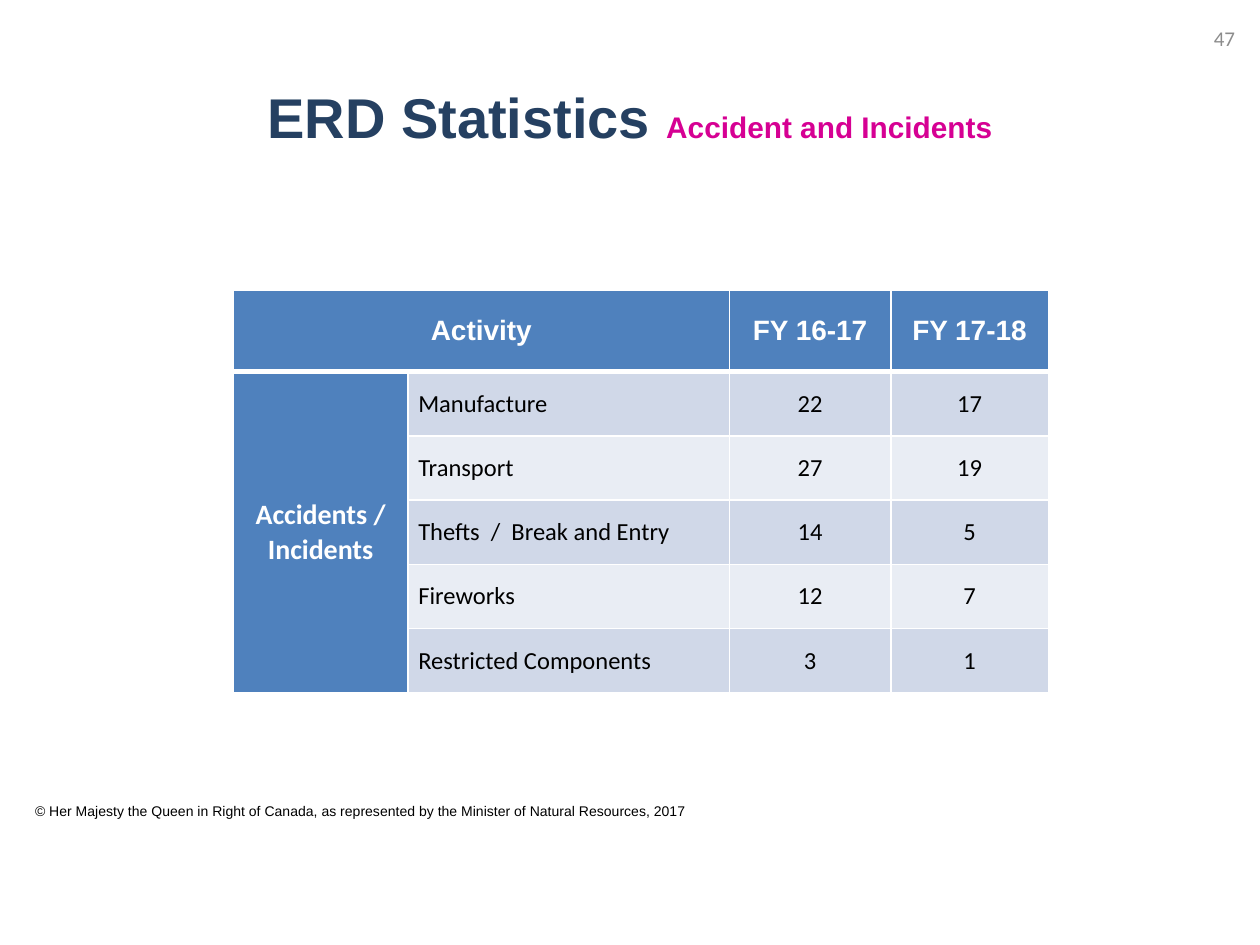
from dataclasses import dataclass

from lxml.etree import SubElement
from pptx import Presentation
from pptx.dml.color import RGBColor
from pptx.enum.text import MSO_ANCHOR as Anchor, PP_ALIGN as Align
from pptx.oxml.ns import qn
from pptx.util import Inches, Pt


@dataclass(frozen=True)
class Theme:
    """Colours, fonts and type sizes of the deck."""
    navy: str = "254061"
    magenta: str = "D60093"
    blue: str = "4F81BD"
    bands: tuple = ("D0D8E8", "E9EDF4")
    white: str = "FFFFFF"
    black: str = "000000"
    grey: str = "8C8C8C"
    head_font: str = "Arial"
    body_font: str = "Calibri"
    title: int = 32
    subtitle: int = 17
    header: int = 16
    body: int = 14
    number: int = 12
    note: int = 8


class Deck:
    """Holds the theme and current slide on a 100 by 75 grid."""

    def __init__(self, theme):
        """Open a 10 by 7.5 inch deck."""
        self.theme = theme
        self.prs = Presentation()
        self.prs.slide_width, self.prs.slide_height = Inches(10), Inches(7.5)
        self.unit = self.prs.slide_width / 100
        self.s = None

    def grid(self, *units):
        """Turn grid units into lengths."""
        return [round(u * self.unit) for u in units]

    def add_slide(self):
        """Start a title-only slide."""
        self.s = self.prs.slides.add_slide(self.prs.slide_layouts[5])

    def run(self, p, text, size, color, font, bold=False):
        """Add one formatted run."""
        r = p.add_run()
        r.text = text
        r.font.size, r.font.name, r.font.bold = Pt(size), font, bold
        r.font.color.rgb = RGBColor.from_string(color)

    def title(self, box, main_text, detail):
        """Place the title with its smaller coloured detail."""
        t, sp = self.theme, self.s.shapes.title
        sp.left, sp.top, sp.width, sp.height = self.grid(*box)
        tf = sp.text_frame
        tf.vertical_anchor = Anchor.MIDDLE
        p = tf.paragraphs[0]
        p.alignment = Align.CENTER
        self.run(p, main_text, t.title, t.navy, t.head_font, True)
        self.run(p, detail, t.subtitle, t.magenta, t.head_font, True)

    def label(self, box, text, size, color, font, align=Align.LEFT, anchor=Anchor.TOP):
        """Add a one-line text box."""
        tf = self.s.shapes.add_textbox(*self.grid(*box)).text_frame
        tf.word_wrap, tf.vertical_anchor = True, anchor
        p = tf.paragraphs[0]
        p.alignment = align
        self.run(p, text, size, color, font)

    def border(self, cell, **widths):
        """Draw white cell borders of the given widths in points."""
        tc_pr = cell._tc.get_or_add_tcPr()
        for side in "LRTB":
            ln = SubElement(tc_pr, qn(f"a:ln{side}"), w=str(Pt(widths.get(side, 1))))
            fill = SubElement(ln, qn("a:solidFill"))
            SubElement(fill, qn("a:srgbClr"), val=self.theme.white)

    def cell(self, cell, text, fill, align, style, inset, **widths):
        """Fill, border and letter one table cell."""
        self.border(cell, **widths)
        cell.fill.solid()
        cell.fill.fore_color.rgb = RGBColor.from_string(fill)
        cell.vertical_anchor = Anchor.MIDDLE
        cell.margin_left = cell.margin_right = Inches(inset)
        cell.margin_top = cell.margin_bottom = 0
        p = cell.text_frame.paragraphs[0]
        p.alignment = align
        if text:
            self.run(p, text, *style)

    def table(self, left, top, cols, head, row, header, group, rows):
        """Add a table with a merged header and a merged row group."""
        t = self.theme
        heights = [head] + [row] * len(rows)
        box = self.grid(left, top, sum(cols), sum(heights))
        tbl = self.s.shapes.add_table(len(heights), len(cols), *box).table
        tbl.horz_banding = False
        for column, width in zip(tbl.columns, self.grid(*cols)):
            column.width = width
        for line, height in zip(tbl.rows, self.grid(*heights)):
            line.height = height
        tbl.cell(0, 0).merge(tbl.cell(0, 1))
        tbl.cell(1, 0).merge(tbl.cell(len(rows), 0))

        head_style = (t.header, t.white, t.head_font, True)
        group_style = (t.header, t.white, t.body_font, True)
        body_style = (t.body, t.black, t.body_font)
        for c, text in enumerate(header):
            inset = 0.08 if c < 2 else 0.06
            self.cell(tbl.cell(0, c), text, t.blue, Align.CENTER, head_style, inset, B=3)
        for i, values in enumerate(rows):
            top_width = 1 if i else 3
            name = "" if i else group
            self.cell(tbl.cell(i + 1, 0), name, t.blue, Align.CENTER, group_style, 0.08, T=top_width)
            for c, text in enumerate(values, 1):
                align = Align.LEFT if c == 1 else Align.CENTER
                self.cell(tbl.cell(i + 1, c), text, t.bands[i % 2], align, body_style, 0.08, T=top_width)


def main():
    """Build the statistics slide."""
    t = Theme()
    deck = Deck(t)
    deck.add_slide()
    deck.label((1.8, 63.2, 54.4, 3.7),
               "© Her Majesty the Queen in Right of Canada, as represented by the Minister of Natural Resources, 2017",
               t.note, t.black, t.head_font)
    deck.title((0, 3, 100, 12.5), "ERD Statistics ", "Accident and Incidents")
    deck.table(18.5, 23, (13.9, 25.5, 12.8, 12.5), 6.5, 5.1,
               ("Activity", "", "FY 16-17", "FY 17-18"), "Accidents / Incidents",
               (("Manufacture", "22", "17"),
                ("Transport", "27", "19"),
                ("Thefts  /  Break and Entry", "14", "5"),
                ("Fireworks", "12", "7"),
                ("Restricted Components", "3", "1")))
    deck.label((93.9, 1, 5.1, 4), "47", t.number, t.grey, t.body_font, Align.RIGHT, Anchor.MIDDLE)
    deck.prs.save("out.pptx")


if __name__ == "__main__":
    main()
